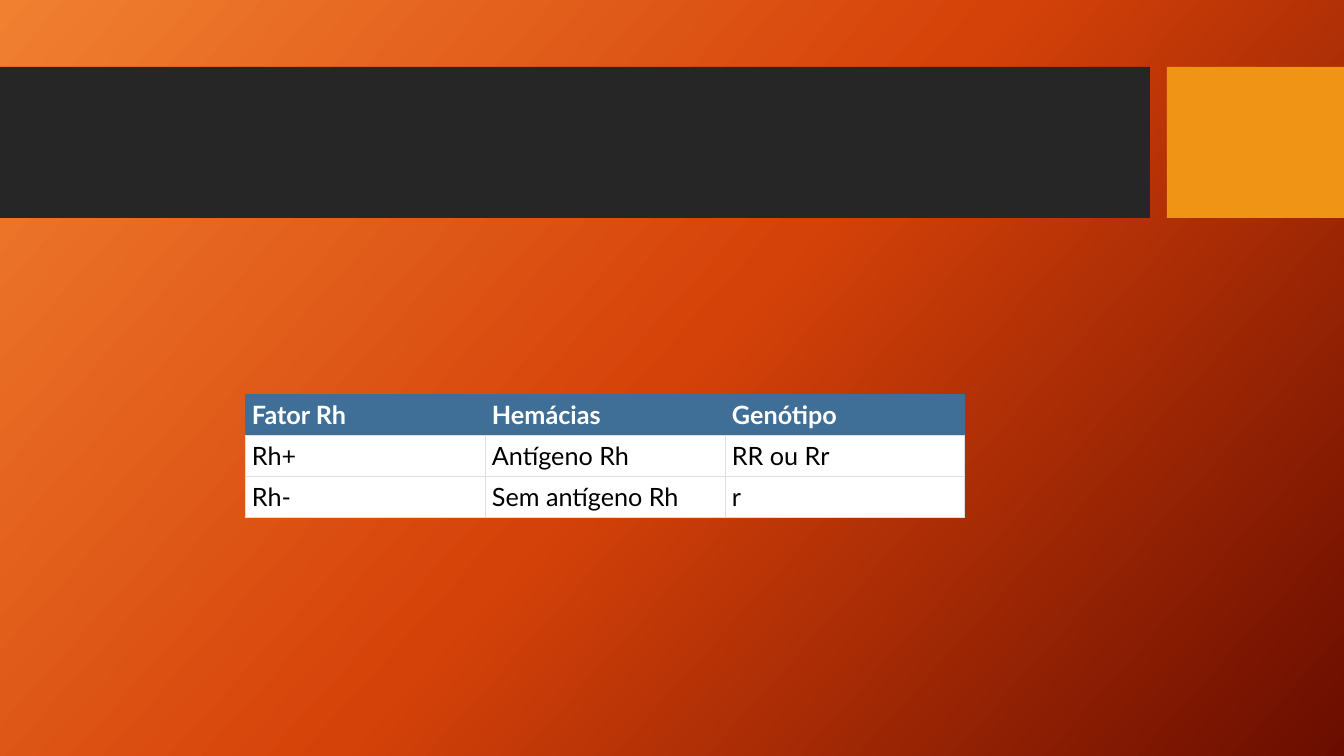
import copy

import lxml.etree
import pptx
import pptx.dml.color
import pptx.enum.shapes
import pptx.enum.text
import pptx.oxml.ns
import pptx.util

RGBColor = pptx.dml.color.RGBColor
qn = pptx.oxml.ns.qn

WHITE = RGBColor(0xFF, 0xFF, 0xFF)
BLACK = RGBColor(0x00, 0x00, 0x00)
CHARCOAL = RGBColor(0x26, 0x26, 0x26)
AMBER = RGBColor(0xF0, 0x94, 0x15)
BLUE = RGBColor(0x3F, 0x6F, 0x96)
GRID = RGBColor(0xDE, 0xDE, 0xDE)
LIGHT_ORANGE = RGBColor(0xF1, 0x80, 0x31)
DEEP_ORANGE = RGBColor(0xD5, 0x42, 0x09)
DARK_RED = RGBColor(0x6A, 0x0D, 0x00)

RH_ROWS = [
    ["Fator Rh", "Hemácias", "Genótipo"],
    ["Rh+", "Antígeno Rh", "RR ou Rr"],
    ["Rh-", "Sem antígeno Rh", "r"],
]


def px(n):
    return round(n * pptx.util.Inches(1) / 100.8)


class Deck:
    """Holds the text style and the slide being built."""

    font = "Lato"
    size = pptx.util.Pt(18)
    border_width = pptx.util.Pt(0.75)

    def __init__(self, width, height):
        self.prs = pptx.Presentation()
        self.prs.slide_width = px(width)
        self.prs.slide_height = px(height)
        self.s = self.prs.slides.add_slide(self.prs.slide_layouts[6])

    def background(self, colors, clockwise):
        fill = self.s.background.fill
        fill.gradient()
        fill.gradient_angle = 360 - clockwise
        stop_list = self.s.element.find(".//" + qn("a:gsLst"))
        while len(stop_list) < len(colors):
            stop_list.append(copy.deepcopy(stop_list[0]))
        for i, (stop, color) in enumerate(zip(fill.gradient_stops, colors)):
            stop.color.rgb = color
            stop.position = i / (len(colors) - 1)

    def bar(self, x, y, w, h, color):
        sp = self.s.shapes.add_shape(
            pptx.enum.shapes.MSO_SHAPE.RECTANGLE, px(x), px(y), px(w), px(h))
        sp.shadow.inherit = False
        sp.fill.solid()
        sp.fill.fore_color.rgb = color
        sp.line.fill.background()

    def border(self, cell, side, color):
        ln = lxml.etree.SubElement(
            cell._tc.get_or_add_tcPr(), qn("a:ln" + side), w=str(self.border_width))
        fill = lxml.etree.SubElement(ln, qn("a:solidFill"))
        lxml.etree.SubElement(fill, qn("a:srgbClr"), val=str(color))

    def cell(self, cell, text, header):
        for side in "LRTB":
            self.border(cell, side, BLUE if header and side != "B" else GRID)
        cell.fill.solid()
        cell.fill.fore_color.rgb = BLUE if header else WHITE
        cell.margin_left = cell.margin_right = px(7)
        cell.margin_top = cell.margin_bottom = px(5)
        cell.vertical_anchor = pptx.enum.text.MSO_ANCHOR.MIDDLE
        cell.text_frame.text = text
        r = cell.text_frame.paragraphs[0].runs[0]
        r.font.name = self.font
        r.font.size = self.size
        r.font.bold = header
        r.font.color.rgb = WHITE if header else BLACK

    def table(self, x, y, col_width, row_height, rows):
        n_rows, n_cols = len(rows), len(rows[0])
        table = self.s.shapes.add_table(
            n_rows, n_cols, px(x), px(y),
            px(n_cols * col_width), px(n_rows * row_height)).table
        table.horz_banding = False
        for i, row in enumerate(rows):
            for j, text in enumerate(row):
                self.cell(table.cell(i, j), text, header=i == 0)


def main():
    deck = Deck(1344, 756)
    deck.background([LIGHT_ORANGE, DEEP_ORANGE, DARK_RED], clockwise=42)
    deck.bar(0, 67, 1150, 151, CHARCOAL)
    deck.bar(1167, 67, 177, 151, AMBER)
    deck.table(245, 394, 240, 41, RH_ROWS)
    deck.prs.save("out.pptx")


if __name__ == "__main__":
    main()
